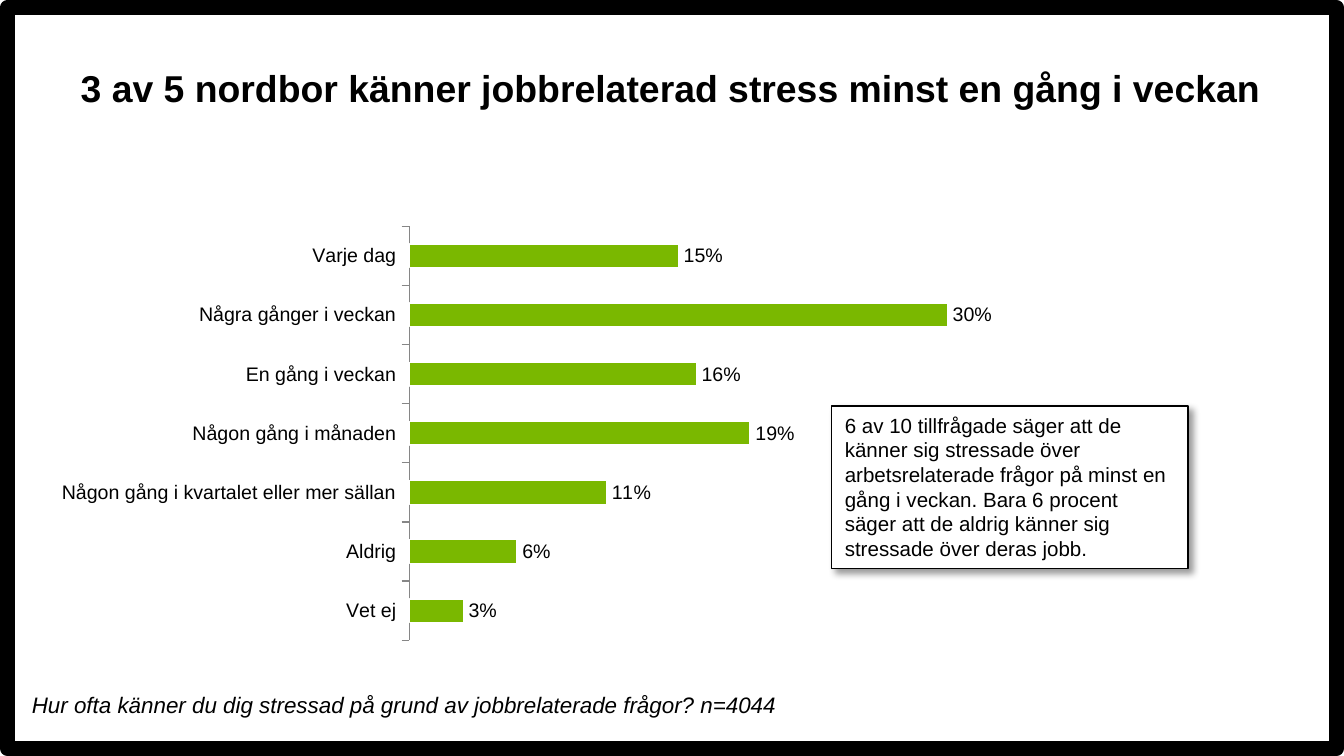
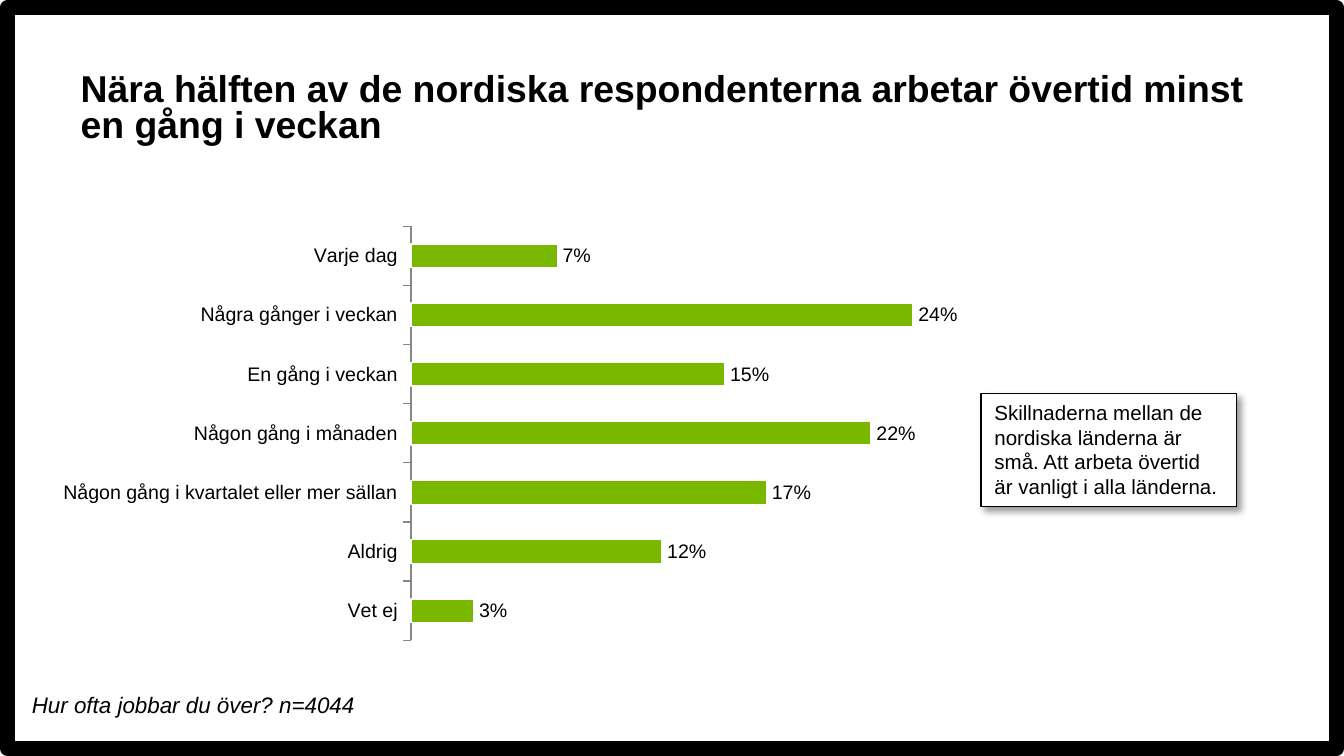
from lxml import etree
from pptx import Presentation
from pptx.chart.data import CategoryChartData
from pptx.dml.color import RGBColor
from pptx.enum.chart import XL_CHART_TYPE, XL_LABEL_POSITION, XL_TICK_MARK
from pptx.enum.shapes import MSO_SHAPE
from pptx.enum.text import MSO_ANCHOR, MSO_AUTO_SIZE, PP_ALIGN
from pptx.oxml.ns import qn
from pptx.util import Pt

BLACK = RGBColor(0x00, 0x00, 0x00)
WHITE = RGBColor(0xFF, 0xFF, 0xFF)
GREEN = RGBColor(0x7A, 0xB8, 0x00)
GREY = RGBColor(0x86, 0x86, 0x86)

BAR = XL_CHART_TYPE.BAR_CLUSTERED
OUT_END = XL_LABEL_POSITION.OUTSIDE_END
TICK_OUT = XL_TICK_MARK.OUTSIDE
NO_TICK = XL_TICK_MARK.NONE
RECT = MSO_SHAPE.RECTANGLE
TOP = MSO_ANCHOR.TOP
GROW = MSO_AUTO_SIZE.SHAPE_TO_FIT_TEXT
FIXED = MSO_AUTO_SIZE.NONE
LEFT = PP_ALIGN.LEFT

FONT = "Arial"
PERCENT = "###0%"
WIDTH, HEIGHT = 720, 405
EDGE = 4
TITLE_BOX = (36, 36, 648, 47.5)
ASK_BOX = (10, 367, 703, 22)

ANSWERS = (
    "Vet ej",
    "Aldrig",
    "Någon gång i kvartalet eller mer sällan",
    "Någon gång i månaden",
    "En gång i veckan",
    "Några gånger i veckan",
    "Varje dag",
)

PAGES = (
    dict(
        title="3 av 5 nordbor känner jobbrelaterad stress minst en gång i veckan",
        ask="Hur ofta känner du dig stressad på grund av jobbrelaterade frågor? n=4044",
        shares=(0.03, 0.06, 0.11, 0.19, 0.16, 0.30, 0.15),
        plot=(22.2, 116.6, 544.3, 231.1),
        note="6 av 10 tillfrågade säger att de känner sig stressade över "
             "arbetsrelaterade frågor på minst en gång i veckan. Bara 6 procent "
             "säger att de aldrig känner sig stressade över deras jobb.",
        place=(445.5, 217.5, 191, 87.2),
    ),
    dict(
        title="Nära hälften av de nordiska respondenterna arbetar övertid "
              "minst en gång i veckan",
        ask="Hur ofta jobbar du över? n=4044",
        shares=(0.03, 0.12, 0.17, 0.22, 0.15, 0.24, 0.07),
        plot=(23, 116.6, 544.3, 231.1),
        note="Skillnaderna mellan de nordiska länderna är små. "
             "Att arbeta övertid är vanligt i alla länderna.",
        place=(525.6, 210.8, 137, 60.5),
    ),
)


def points(box):
    return [Pt(n) for n in box]


def style(font, size, bold=False, italic=False):
    font.name = FONT
    font.size = Pt(size)
    font.bold = bold
    font.italic = italic
    font.color.rgb = BLACK


def write(shape, text, size, fit=GROW, **look):
    frame = shape.text_frame
    frame.text = text
    frame.word_wrap = True
    frame.auto_size = fit
    frame.vertical_anchor = TOP
    para = frame.paragraphs[0]
    para.alignment = LEFT
    style(para.runs[0].font, size, **look)
    return para


def add_frame(slide):
    box = (EDGE, EDGE, WIDTH - 2 * EDGE, HEIGHT - 2 * EDGE)
    frame = slide.shapes.add_shape(RECT, *points(box))
    frame.shadow.inherit = False
    frame.fill.background()
    frame.line.color.rgb = BLACK
    frame.line.width = Pt(2 * EDGE)


def set_title(slide, text, box):
    title = slide.shapes.title
    title.left, title.top, title.width, title.height = points(box)
    para = write(title, text, 20, FIXED, bold=True)
    para.line_spacing = 0.8


def add_bars(slide, shares, box):
    data = CategoryChartData(number_format=PERCENT)
    data.categories = ANSWERS
    data.add_series("Series 1", shares)
    chart = slide.shapes.add_chart(BAR, *points(box), data).chart
    chart.has_legend = False
    chart.has_title = False
    style(chart.font, 18)

    scale = chart.value_axis
    scale.visible = False
    scale.has_major_gridlines = False

    axis = chart.category_axis
    axis.major_tick_mark = TICK_OUT
    axis.minor_tick_mark = NO_TICK
    axis.format.line.color.rgb = GREY
    axis.format.line.width = Pt(0.75)
    style(axis.tick_labels.font, 10.5)

    plot = chart.plots[0]
    plot.gap_width = 150
    plot.vary_by_categories = False
    bars = plot.series[0]
    bars.format.fill.solid()
    bars.format.fill.fore_color.rgb = GREEN
    bars.format.line.color.rgb = WHITE
    bars.format.line.width = Pt(0.75)

    labels = bars.data_labels
    labels.show_value = True
    labels.position = OUT_END
    labels.number_format = PERCENT
    labels.number_format_is_linked = False
    style(labels.font, 10.5)


def cast_shadow(shape):
    shape.shadow.inherit = False
    effects = shape.element.spPr.find(qn("a:effectLst"))
    outer = etree.SubElement(effects, qn("a:outerShdw"), blurRad=str(Pt(4)),
                             dist=str(Pt(3)), dir=str(45 * 60000),
                             algn="tl", rotWithShape="0")
    tint = etree.SubElement(outer, qn("a:srgbClr"), val=str(BLACK))
    etree.SubElement(tint, qn("a:alpha"), val="40000")


def add_note(slide, text, box):
    note = slide.shapes.add_shape(RECT, *points(box))
    note.fill.solid()
    note.fill.fore_color.rgb = WHITE
    note.line.color.rgb = BLACK
    note.line.width = Pt(0.75)
    cast_shadow(note)
    write(note, text, 11)


def add_ask(slide, text, box):
    """Add the survey question at the foot of the slide."""
    write(slide.shapes.add_textbox(*points(box)), text, 12, italic=True)


def add_page(deck, page):
    slide = deck.slides.add_slide(deck.slide_layouts[5])
    add_frame(slide)
    set_title(slide, page["title"], TITLE_BOX)
    add_bars(slide, page["shares"], page["plot"])
    add_ask(slide, page["ask"], ASK_BOX)
    add_note(slide, page["note"], page["place"])


def main():
    deck = Presentation()
    deck.slide_width, deck.slide_height = Pt(WIDTH), Pt(HEIGHT)
    for page in PAGES:
        add_page(deck, page)
    deck.save("out.pptx")


if __name__ == "__main__":
    main()
